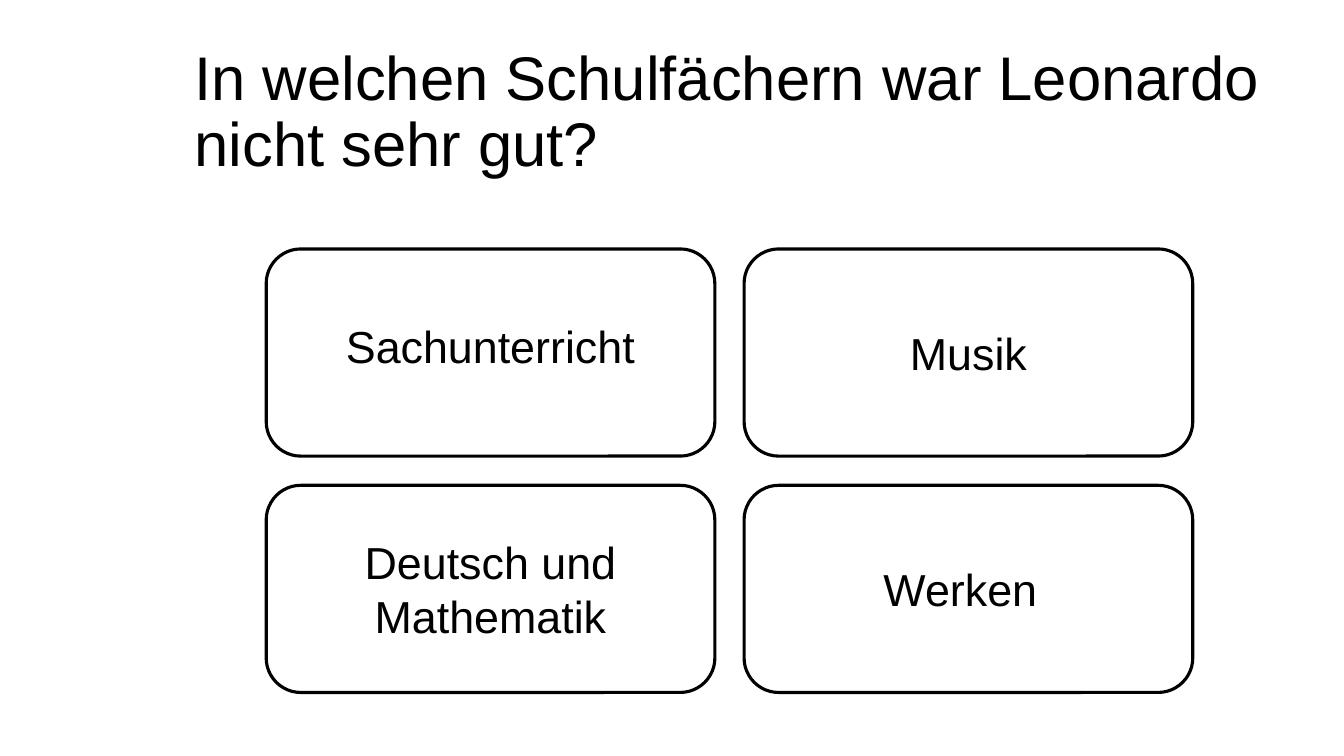
from pptx import Presentation
from pptx.dml.color import RGBColor
from pptx.enum.shapes import MSO_SHAPE
from pptx.enum.text import MSO_ANCHOR, PP_ALIGN
from pptx.util import Inches, Pt

ROUNDED = MSO_SHAPE.ROUNDED_RECTANGLE
MIDDLE, TOP = MSO_ANCHOR.MIDDLE, MSO_ANCHOR.TOP
LEFT, CENTER = PP_ALIGN.LEFT, PP_ALIGN.CENTER
FONT, BLACK = "Arial", "000000"

# Answers by row: text, left and top inside the card, text height
ANSWERS = [
    [("Sachunterricht", 0.28, 0.64, 0.64), ("Musik", 0.28, 0.71, 0.64)],
    [("Deutsch und Mathematik", 0.28, 0.44, 1.18), ("Werken", 0.2, 0.71, 0.64)],
]
LABEL_W = 3.89


def color(value):
    return RGBColor.from_string(value)


def add_text(slide, box, text, size, align, anchor):
    sp = slide.shapes.add_textbox(*map(Inches, box))
    tf = sp.text_frame
    tf.word_wrap = True
    tf.vertical_anchor = anchor
    tf.text = text
    p = tf.paragraphs[0]
    p.alignment = align
    font = p.runs[0].font
    font.name, font.size = FONT, Pt(size)
    font.color.rgb = color(BLACK)
    return p


def add_title(slide, box, text):
    p = add_text(slide, box, text, 44, LEFT, MIDDLE)
    p.line_spacing = 0.9


def add_card(slide, box, answer):
    x, y, w, h = box
    text, dx, dy, text_h = answer
    sp = slide.shapes.add_shape(ROUNDED, *map(Inches, box))
    sp.shadow.inherit = False
    sp.fill.background()
    sp.line.color.rgb = color(BLACK)
    sp.line.width = Pt(2.25)
    add_text(slide, (x + dx, y + dy, LABEL_W, text_h), text, 32, CENTER, TOP)


def add_answers(slide, box, rows, gap):
    x, y, w, h = box
    card_w = (w - gap * (len(rows[0]) - 1)) / len(rows[0])
    card_h = (h - gap * (len(rows) - 1)) / len(rows)
    for i, row in enumerate(rows):
        for j, answer in enumerate(row):
            card = (x + j * (card_w + gap), y + i * (card_h + gap), card_w, card_h)
            add_card(slide, card, answer)


def main():
    prs = Presentation()
    prs.slide_width, prs.slide_height = Inches(13.33), Inches(7.5)
    slide = prs.slides.add_slide(prs.slide_layouts[6])
    # Question
    add_title(slide, (1.83, 0.4, 11.5, 1.45),
              "In welchen Schulfächern war Leonardo nicht sehr gut?")
    # Answer grid
    add_answers(slide, (2.64, 2.47, 9.19, 4.4), ANSWERS, 0.29)
    prs.save("out.pptx")


if __name__ == "__main__":
    main()
